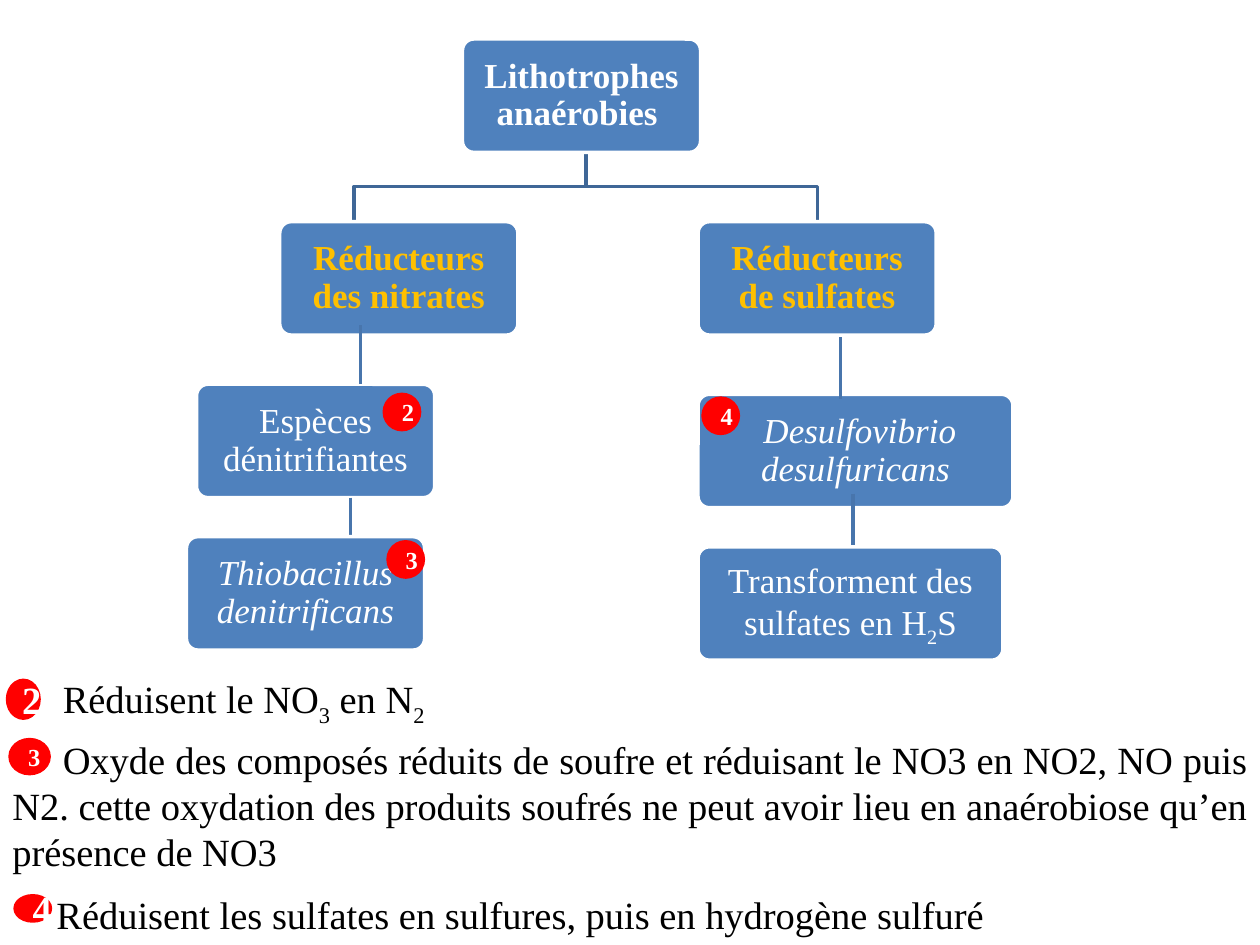
import pptx
import pptx.dml.color
import pptx.enum.shapes
import pptx.enum.text
import pptx.oxml.ns
import pptx.util
from lxml import etree

Inches = pptx.util.Inches
Pt = pptx.util.Pt
RGBColor = pptx.dml.color.RGBColor
SHAPE = pptx.enum.shapes.MSO_SHAPE
ALIGN = pptx.enum.text.PP_ALIGN
MIDDLE = pptx.enum.text.MSO_ANCHOR.MIDDLE

FONT = "Times New Roman"
WHITE = RGBColor(0xFF, 0xFF, 0xFF)
BLACK = RGBColor(0x00, 0x00, 0x00)
BLUE = RGBColor(0x4F, 0x81, 0xBD)
BRANCH = RGBColor(0x3F, 0x67, 0x97)
STEM = RGBColor(0x48, 0x75, 0xAC)
RED = RGBColor(0xFF, 0x00, 0x00)
GOLD = RGBColor(0xFF, 0xC0, 0x00)

BOX_W, BOX_H = 1.89, 0.9
BADGE = 0.28


class Diagram:
    def __init__(self, slide):
        self.slide = slide

    def add_text(self, tf, parts, size, color, align, bold=False, italic=False):
        """Fill one paragraph; every second part is a subscript."""
        tf.word_wrap = True
        p = tf.paragraphs[0]
        p.alignment = align
        p.font.name = FONT
        p.font.size = Pt(size)
        p.font.color.rgb = color
        p.font.bold = bold
        p.font.italic = italic
        for i, part in enumerate(parts):
            r = p.add_run()
            r.text = part
            if i % 2:
                r._r.get_or_add_rPr().set("baseline", "-25000")
        return p

    def shape(self, kind, x, y, w, h, fill, line):
        sp = self.slide.shapes.add_shape(kind, Inches(x), Inches(y), Inches(w), Inches(h))
        sp.shadow.inherit = False
        sp.fill.solid()
        sp.fill.fore_color.rgb = fill
        sp.line.color.rgb = line
        sp.line.width = Pt(2)
        sp.text_frame.vertical_anchor = MIDDLE
        return sp

    def box(self, x, y, *parts, w=BOX_W, color=WHITE, bold=False, italic=False):
        sp = self.shape(SHAPE.ROUNDED_RECTANGLE, x, y, w, BOX_H, BLUE, WHITE)
        sp.adjustments[0] = 0.1
        tf = sp.text_frame
        tf.margin_left = tf.margin_right = Inches(0.12)
        tf.margin_top = tf.margin_bottom = Inches(0.11)
        p = self.add_text(tf, parts, 20, color, ALIGN.CENTER, bold, italic)
        p.line_spacing = 0.9

    def badge(self, x, y, digit, w=BADGE, h=BADGE, size=14):
        sp = self.shape(SHAPE.OVAL, x, y, w, h, RED, RED)
        self.add_text(sp.text_frame, [digit], size, WHITE, ALIGN.CENTER, bold=True)

    def stem(self, x, top, bottom):
        c = self.slide.shapes.add_connector(
            pptx.enum.shapes.MSO_CONNECTOR.STRAIGHT,
            Inches(x), Inches(top), Inches(x), Inches(bottom))
        c.line.color.rgb = STEM
        c.line.width = Pt(2)
        etree.SubElement(c._element.spPr, pptx.oxml.ns.qn("a:effectLst"))

    def branch(self, points):
        start, *rest = [(Inches(x), Inches(y)) for x, y in points]
        fb = self.slide.shapes.build_freeform(*start)
        fb.add_line_segments(rest, close=False)
        sp = fb.convert_to_shape()
        sp.shadow.inherit = False
        sp.fill.background()
        sp.line.color.rgb = BRANCH
        sp.line.width = Pt(2)

    def note(self, y, w, h, indent, *parts, align=ALIGN.JUSTIFY):
        sp = self.slide.shapes.add_textbox(0, Inches(y), Inches(w), Inches(h))
        p = self.add_text(sp.text_frame, parts, 22, BLACK, align)
        p._p.get_or_add_pPr().set("indent", str(Inches(indent)))


def main():
    prs = pptx.Presentation()
    prs.slide_width, prs.slide_height = Inches(10), Inches(7.5)
    d = Diagram(prs.slides.add_slide(prs.slide_layouts[6]))

    # Third level and the lines of the tree
    d.box(1.56, 3.05, "Espèces dénitrifiantes")
    d.box(5.54, 3.13, " Desulfovibrio desulfuricans", w=2.5, italic=True)
    for x in (2.81, 6.49):
        d.branch([(4.65, 1.13), (4.65, 1.48), (x, 1.48), (x, 1.83)])
    d.stem(2.78, 3.95, 4.42)
    d.stem(6.67, 2.54, 3.17)
    d.stem(6.77, 3.92, 4.39)

    # Fourth level
    d.box(1.48, 4.26, "Thiobacillus denitrificans", italic=True)
    d.box(5.54, 4.34, "Transforment des sulfates en H", "2", "S", w=2.42)

    # Root and second level
    d.box(3.67, 0.31, "Lithotrophes anaérobies ", bold=True)
    d.box(2.22, 1.76, "Réducteurs des nitrates", color=GOLD, bold=True)
    d.box(5.54, 1.76, "Réducteurs de sulfates", color=GOLD, bold=True)
    d.stem(2.86, 2.58, 3.05)

    # Number badges on the boxes
    d.badge(3.05, 3.13, "2")
    d.badge(5.58, 3.16, "4")
    d.badge(3.08, 4.3, "3")

    # Numbered notes
    d.badge(0.06, 5.4, "2", w=0.25, h=0.3, size=22)
    d.note(5.31, 4.77, 0.47, 0.4, "Réduisent le NO", "3", " en N", "2", align=ALIGN.LEFT)
    d.note(5.79, 10, 1.21, 0.4,
           "Oxyde des composés réduits de soufre et réduisant le NO3 en NO2, NO puis N2. "
           "cette oxydation des produits soufrés ne peut avoir lieu en anaérobiose "
           "qu’en présence de NO3")
    d.badge(0.08, 5.87, "3", w=0.31, h=0.27)
    d.badge(0.12, 7.11, "4", h=0.2, size=22)
    d.note(7.02, 10, 0.47, 0.35,
           "Réduisent les sulfates en sulfures, puis en hydrogène sulfuré")

    prs.save("out.pptx")


if __name__ == "__main__":
    main()
